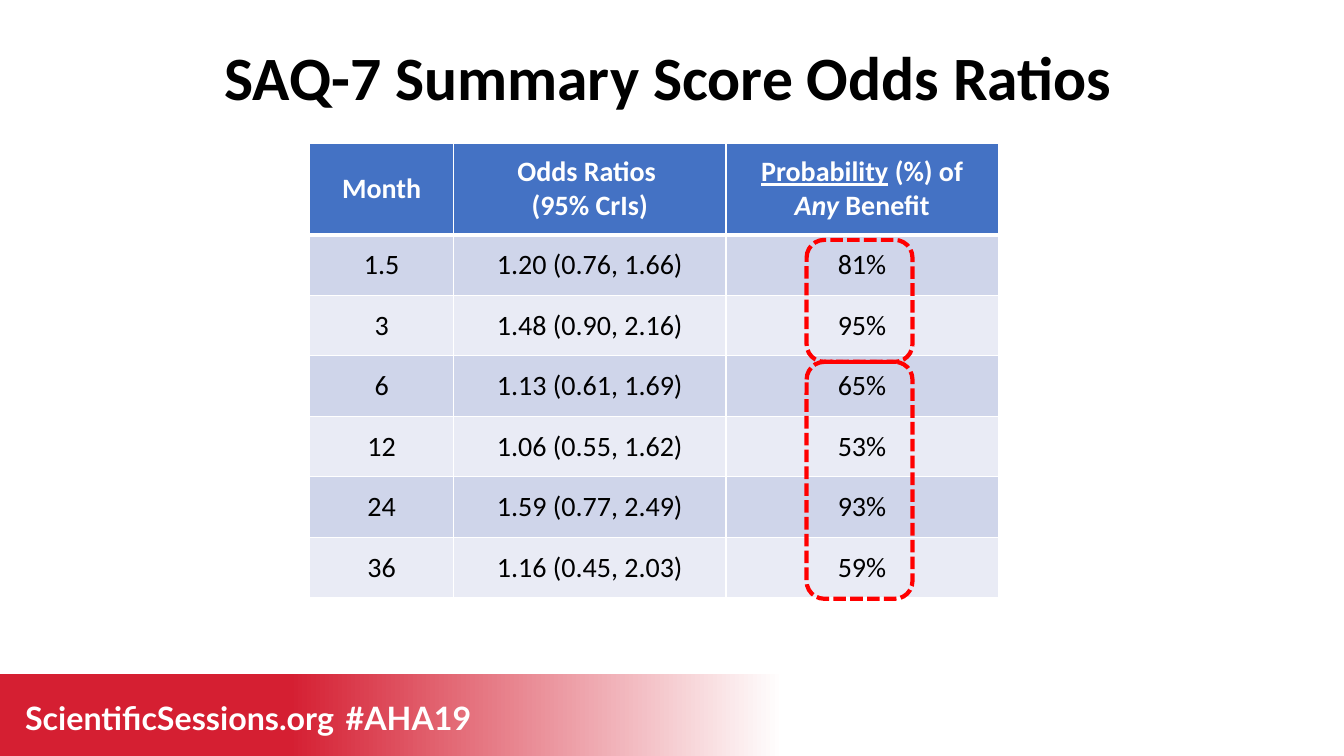
from collections import namedtuple

from pptx import Presentation
from pptx.dml.color import RGBColor
from pptx.enum.dml import MSO_LINE
from pptx.enum.shapes import MSO_SHAPE
from pptx.enum.text import MSO_ANCHOR, PP_ALIGN
from pptx.oxml import parse_xml
from pptx.oxml.ns import nsdecls
from pptx.util import Inches, Pt

WHITE = RGBColor(0xFF, 0xFF, 0xFF)
BLACK = RGBColor(0x00, 0x00, 0x00)
CRIMSON = RGBColor(0xD5, 0x1F, 0x32)
RING_RED = RGBColor(0xFF, 0x00, 0x00)
HEADER_BLUE = RGBColor(0x44, 0x72, 0xC4)
BANDS = (RGBColor(0xCF, 0xD5, 0xEA), RGBColor(0xE9, 0xEB, 0xF5))

Box = namedtuple("Box", "left top width height")
SLIDE = Box(0, 0, 13.33, 7.5)

COLUMNS = (1.43, 2.7, 2.7)
HEADER_HEIGHT = 0.91
ROW_HEIGHT = 0.6
RESULTS = (
    ("1.5", "1.20 (0.76, 1.66)", "81%"),
    ("3", "1.48 (0.90, 2.16)", "95%"),
    ("6", "1.13 (0.61, 1.69)", "65%"),
    ("12", "1.06 (0.55, 1.62)", "53%"),
    ("24", "1.59 (0.77, 2.49)", "93%"),
    ("36", "1.16 (0.45, 2.03)", "59%"),
)
HEADERS = (
    ((("Month", ""),),),
    ((("Odds Ratios ", ""),), (("(95% CrIs)", ""),)),
    ((("Probability", "u"), (" (%) of ", ""), ("Any", "i"), (" Benefit", "")),),
)


def inches(box):
    return [Inches(length) for length in box]


def style(para, name, size, color, bold):
    para.font.name = name
    para.font.size = Pt(size)
    para.font.color.rgb = color
    para.font.bold = bold


def add_text(page, box, text, name, size, color):
    frame = page.shapes.add_textbox(*inches(box)).text_frame
    frame.word_wrap = True
    para = frame.paragraphs[0]
    para.text = text
    style(para, name, size, color, True)
    return frame, para


def add_footer(page, box):
    band = page.shapes.add_shape(MSO_SHAPE.RECTANGLE, *inches(box))
    band.shadow.inherit = False
    band.line.fill.background()
    band.fill.gradient()
    band.fill.gradient_angle = 180
    for stop, color, position in zip(band.fill.gradient_stops, (WHITE, CRIMSON), (0, 0.63)):
        stop.color.rgb = color
        stop.position = position
    for text, left, width in (("ScientificSessions.org", 0.16, 4.74), ("#AHA19", 3.34, 1.45)):
        label = Box(box.left + left, box.top + 0.32, width, 0.36)
        para = add_text(page, label, text, "Lato", 23, WHITE)[1]
        para.line_spacing = Pt(18.2)


def add_title(page, box):
    frame, para = add_text(page, box, "SAQ-7 Summary Score Odds Ratios", "Calibri", 44, BLACK)
    frame.vertical_anchor = MSO_ANCHOR.MIDDLE
    para.alignment = PP_ALIGN.CENTER
    para.line_spacing = 0.9


def format_cell(cell, paragraphs, fill, color, bold, top, bottom):
    cell.vertical_anchor = MSO_ANCHOR.MIDDLE
    frame = cell.text_frame
    for index, spans in enumerate(paragraphs):
        para = frame.add_paragraph() if index else frame.paragraphs[0]
        para.alignment = PP_ALIGN.CENTER
        style(para, "Calibri", 20, color, bold)
        for text, mark in spans:
            span = para.add_run()
            span.text = text
            if mark == "u":
                span.font.underline = True
            elif mark == "i":
                span.font.italic = True
    properties = cell._tc.get_or_add_tcPr()
    for side, weight in (("L", 1), ("R", 1), ("T", top), ("B", bottom)):
        properties.append(parse_xml(
            f'<a:ln{side} {nsdecls("a")} w="{Pt(weight)}"><a:solidFill>'
            f'<a:srgbClr val="{WHITE}"/></a:solidFill></a:ln{side}>'))
    cell.fill.solid()
    cell.fill.fore_color.rgb = fill


def add_results(page, box):
    table = page.shapes.add_table(len(RESULTS) + 1, len(COLUMNS), *inches(box)).table
    for column, width in zip(table.columns, COLUMNS):
        column.width = Inches(width)
    for index, row in enumerate(table.rows):
        row.height = Inches(ROW_HEIGHT if index else HEADER_HEIGHT)
    for column, paragraphs in enumerate(HEADERS):
        format_cell(table.cell(0, column), paragraphs, HEADER_BLUE, WHITE, True, 1, 3)
    for row, values in enumerate(RESULTS, 1):
        for column, value in enumerate(values):
            format_cell(table.cell(row, column), (((value, ""),),), BANDS[(row - 1) % 2],
                        BLACK, False, 3 if row == 1 else 1, 1)


def add_rings(page, box):
    top = box.top
    for height in (1.21, 2.35):
        ring = page.shapes.add_shape(
            MSO_SHAPE.ROUNDED_RECTANGLE, *inches(Box(box.left, top, box.width, height)))
        ring.shadow.inherit = False
        ring.fill.background()
        ring.line.color.rgb = RING_RED
        ring.line.width = Pt(3)
        ring.line.dash_style = MSO_LINE.SQUARE_DOT
        top += height


def build_results_slide(deck):
    page = deck.slides.add_slide(deck.slide_layouts[6])
    grid = Box(3.07, 1.42, sum(COLUMNS), HEADER_HEIGHT + ROW_HEIGHT * len(RESULTS))
    add_footer(page, Box(-0.01, 6.69, 7.78, 0.81))
    add_results(page, grid)
    add_title(page, Box(0.2, 0.4, 12.86, 0.79))
    ring_left = grid.left + sum(COLUMNS[:2]) + 0.8
    add_rings(page, Box(ring_left, grid.top + HEADER_HEIGHT + 0.05, 1.05, 3.56))


def main():
    deck = Presentation()
    deck.slide_width = Inches(SLIDE.width)
    deck.slide_height = Inches(SLIDE.height)
    build_results_slide(deck)
    deck.save("out.pptx")


if __name__ == "__main__":
    main()
